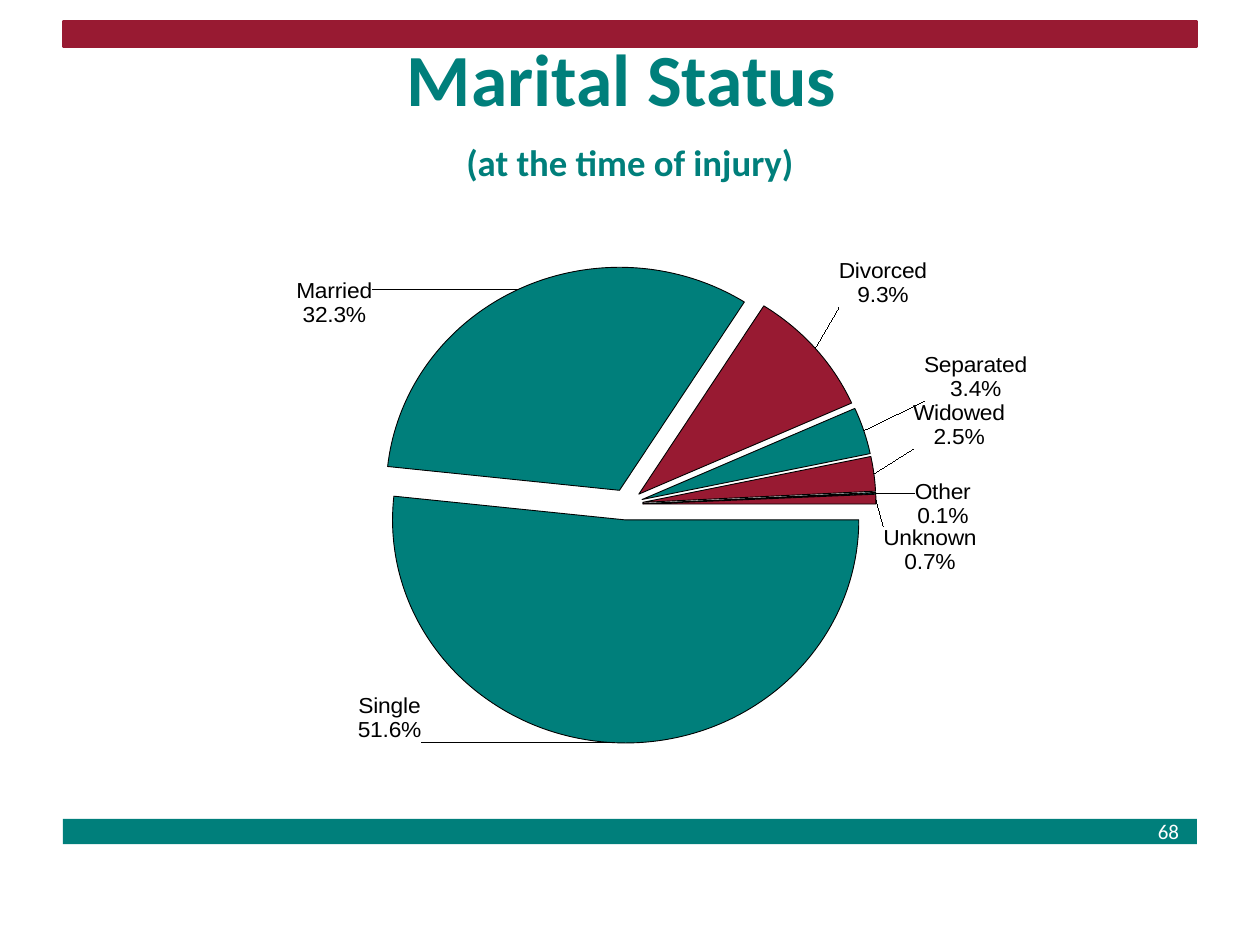
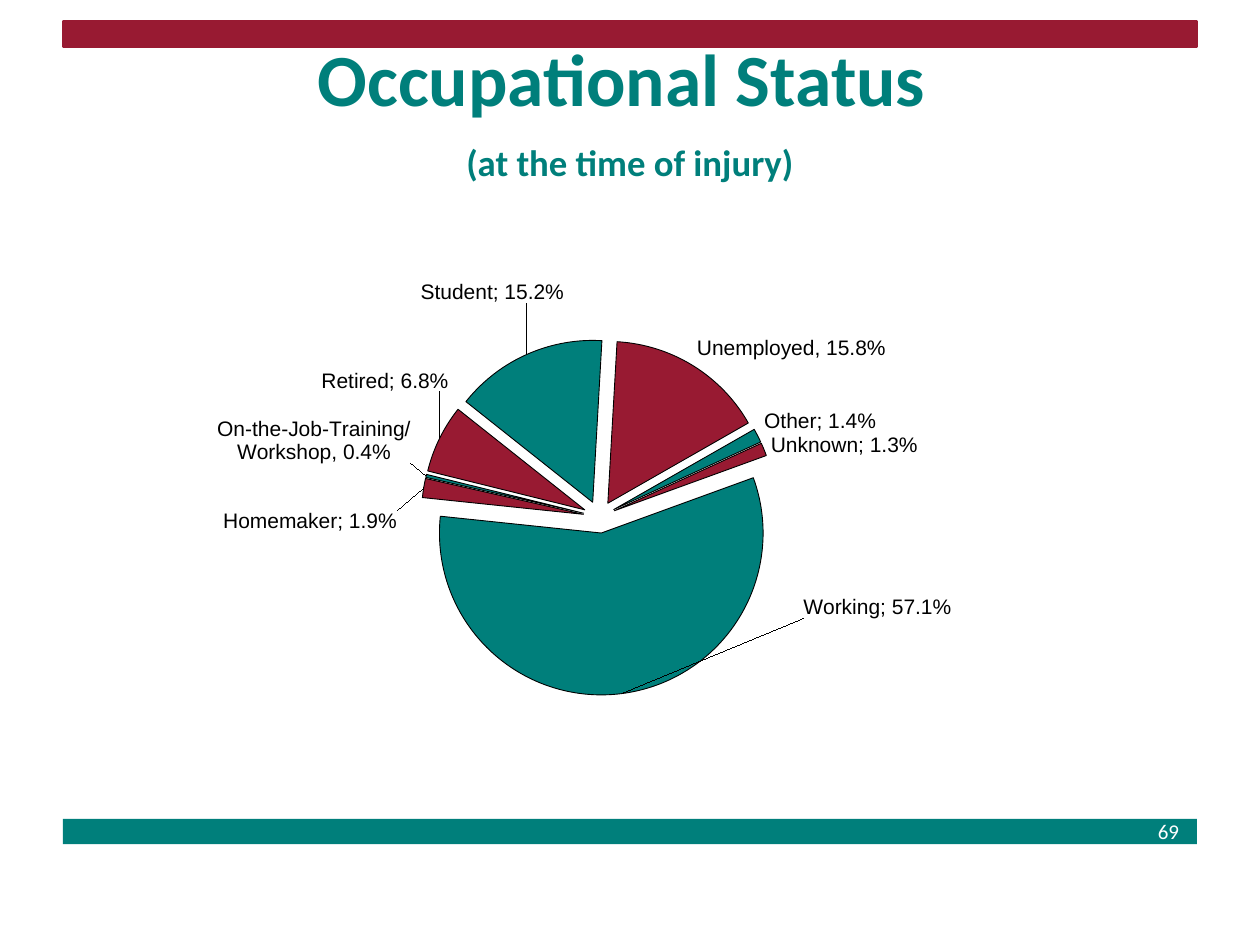
"""Build two slides of exploded pie charts on status at the time of injury."""
from dataclasses import dataclass

import pptx
import pptx.chart.data
import pptx.dml.color
import pptx.enum.chart
import pptx.enum.shapes
import pptx.enum.text
import pptx.oxml
import pptx.oxml.ns
import pptx.util

Pt = pptx.util.Pt
RGB = pptx.dml.color.RGBColor
TEAL = RGB(0x00, 0x7F, 0x7B)
RED = RGB(0x98, 0x1A, 0x32)
BLACK = RGB(0, 0, 0)
WHITE = RGB(255, 255, 255)
COLS, ROWS = 20, 30
WIDTH, HEIGHT = pptx.util.Inches(10), pptx.util.Inches(7.5)
PERCENT = "0.0%"


@dataclass(frozen=True)
class Box:
    """A place on the slide in grid columns and rows."""
    col: float
    row: float
    wide: float
    high: float

    def place(self) -> tuple[int, int, int, int]:
        """Return left, top, width and height in slide units."""
        x, y = WIDTH / COLS, HEIGHT / ROWS
        return (round(self.col * x), round(self.row * y),
                round(self.wide * x), round(self.high * y))


@dataclass(frozen=True)
class Band:
    """A coloured bar across the slide."""
    box: Box
    fill: RGB
    edge: bool


@dataclass(frozen=True)
class Slice:
    """A pie slice; shift moves its label by percent of the chart's size."""
    name: str
    value: float
    fill: RGB
    shift: tuple[float, float] | None = None
    label: str = ""

    def custom(self) -> bool:
        """Tell whether the slice has a label of its own."""
        return bool(self.shift or self.label)


@dataclass(frozen=True)
class Pie:
    """A pie chart with its plot area in percent of the chart's size."""
    title: str
    number: int
    start: int
    burst: int
    size: float
    plot: tuple[float, float, float, float]
    slices: list[Slice]


BANDS = [Band(Box(1, 26, 18, 0.8), TEAL, False),
         Band(Box(1, 0.68, 18, 0.8), RED, True)]
TITLE = Box(1, 1.48, 18, 4.72)
CHART = Box(1, 7, 18, 18.32)
NUMBER = Box(18.18, 25.8, 0.84, 1.2)
SUBTITLE = "(at the time of injury)"

PIES = [
    Pie("Marital Status ", 68, 90, 7, 13, (27.7, 3.4, 44, 96.1), [
        Slice("Single", 51.7, TEAL, (-19.7, -9.9), "Single\n51.6%"),
        Slice("Married", 32.3, TEAL, (-12.6, 8), "Married\n32.3%"),
        Slice("Divorced", 9.3, RED, (1.6, -6.5), "Divorced\n9.3%"),
        Slice("Separated", 3.4, TEAL, (4.7, -4.9), "Separated\n3.4%"),
        Slice("Widowed", 2.5, RED, (2.8, -4.3), "Widowed\n2.5%"),
        Slice("Other", 0.1, TEAL, (2.8, 2.1), "Other\n0.1%"),
        Slice("Unknown", 0.7, RED, (0, 9.4), "Unknown\n0.7%")]),
    Pie("Occupational Status ", 69, 70, 10, 12, (31.6, 18.3, 31.4, 66.2), [
        Slice("Working", 0.571, TEAL, (16, -18.2)),
        Slice("Homemaker", 0.019, RED, (-1.7, 8)),
        Slice("On-Job-Training/\nWorkshop", 0.003, TEAL, (-0.7, -1.9),
              "On-the-Job-Training/\nWorkshop, 0.4%"),
        Slice("Retired", 0.068, RED, (1.4, -7.5)),
        Slice("Student", 0.152, TEAL, (3.6, -7.7)),
        Slice("Unemployment", 0.158, RED, None, "Unemployed, 15.8%"),
        Slice("Other", 0.014, TEAL),
        Slice("Unknown", 0.013, RED, (0, 1.8))]),
]


def node(tag: str, inner: str = "", **attrs: object):
    """Make a chart element."""
    text = "".join(f' {key}="{val}"' for key, val in attrs.items())
    space = pptx.oxml.ns.nsdecls("c")
    return pptx.oxml.parse_xml(f"<c:{tag} {space}{text}>{inner}</c:{tag}>")


def layout(head: str, **parts: float):
    """Make a manual layout from percentages."""
    inner = "".join(f'<c:{key} val="{val / 100:.3f}"/>'
                    for key, val in parts.items())
    return node("layout", f"<c:manualLayout>{head}{inner}</c:manualLayout>")


def style(font, size: float, color: RGB, face: str, bold: bool = False) -> None:
    """Set a font's look."""
    font.size, font.name, font.bold = Pt(size), face, bold
    font.color.rgb = color


def draw_band(shapes, band: Band):
    """Draw one bar and return it."""
    kind = pptx.enum.shapes.MSO_SHAPE.RECTANGLE
    bar = shapes.add_shape(kind, *band.box.place())
    bar.shadow.inherit = False
    bar.fill.solid()
    bar.fill.fore_color.rgb = band.fill
    if band.edge:
        bar.line.color.rgb = band.fill
        bar.line.width = Pt(1.5)
    else:
        bar.line.fill.background()
    return bar


def draw_title(slide, text: str) -> None:
    """Fill the title with a heading and the shared subtitle."""
    shape = slide.shapes.title
    shape.left, shape.top, shape.width, shape.height = TITLE.place()
    frame = shape.text_frame
    frame.vertical_anchor = pptx.enum.text.MSO_ANCHOR.MIDDLE
    para = frame.paragraphs[0]
    para.alignment = pptx.enum.text.PP_ALIGN.CENTER
    para.line_spacing = Pt(36)
    style(para.font, 42, TEAL, "Calibri", True)
    para.add_run().text = text
    para.add_line_break()
    run = para.add_run()
    run.text = SUBTITLE
    run.font.size = Pt(21)


def draw_number(slide, number: int) -> None:
    """Write the slide number on the lower bar."""
    frame = slide.shapes.add_textbox(*NUMBER.place()).text_frame
    frame.word_wrap = True
    para = frame.paragraphs[0]
    para.text = str(number)
    style(para.font, 12, WHITE, "Calibri")


def draw_label(point, part: Slice, size: float) -> None:
    """Give a slice its own label."""
    label = point.data_label
    if part.label:
        label.text_frame.text = part.label
        for para in label.text_frame.paragraphs:
            style(para.font, size, BLACK, "Arial")
    else:
        style(label.font, size, BLACK, "Arial")
    label.position = pptx.enum.chart.XL_LABEL_POSITION.OUTSIDE_END


def move_label(label, part: Slice) -> None:
    """Shift a label and show its category and value."""
    if part.shift:
        x, y = part.shift
        label.insert(1, layout("", x=x, y=y))
    if not part.label:
        label.insert(2, node("numFmt", formatCode=PERCENT, sourceLinked=0))
    label.xpath("c:showCatName")[0].set("val", "1")
    label.append(node("separator", "; "))


def paint(look, fill: RGB) -> None:
    """Fill and outline a slice or a series."""
    look.fill.solid()
    look.fill.fore_color.rgb = fill
    look.line.color.rgb = BLACK
    look.line.width = Pt(0.5)


def draw_pie(slide, pie: Pie) -> None:
    """Draw the pie chart with its labels."""
    data = pptx.chart.data.CategoryChartData(number_format=PERCENT)
    data.categories = [part.name for part in pie.slices]
    data.add_series("Series 1", [part.value for part in pie.slices])
    kind = pptx.enum.chart.XL_CHART_TYPE.PIE
    chart = slide.shapes.add_chart(kind, *CHART.place(), data).chart
    chart.has_legend = chart.has_title = False
    style(chart.font, pie.size, BLACK, "Arial")
    plot = chart.plots[0]
    plot.vary_by_categories = False
    series = plot.series[0]
    labels = series.data_labels
    style(labels.font, pie.size, BLACK, "Arial")
    labels.number_format, labels.number_format_is_linked = PERCENT, False
    labels.show_value = labels.show_category_name = True
    labels.position = pptx.enum.chart.XL_LABEL_POSITION.OUTSIDE_END
    paint(series.format, TEAL)
    for index, part in enumerate(pie.slices):
        point = series.points[index]
        paint(point.format, part.fill)
        if part.custom():
            draw_label(point, part, pie.size)
    tune(chart.element, pie)


def tune(root, pie: Pie) -> None:
    """Set the layout, turn, burst and label places of a pie."""
    area = root.xpath(".//c:plotArea")[0]
    for old in area.xpath("c:layout | c:pieChart/c:firstSliceAng"):
        old.getparent().remove(old)
    head = ('<c:layoutTarget val="inner"/><c:xMode val="edge"/>'
            '<c:yMode val="edge"/>')
    area.insert(0, layout(head, **dict(zip("xywh", pie.plot))))
    area.xpath("c:pieChart")[0].append(node("firstSliceAng", val=pie.start))
    area.xpath(".//c:ser/c:spPr")[0].addnext(node("explosion", val=pie.burst))
    for look in area.xpath(".//c:dPt/c:spPr"):
        look.addprevious(node("explosion", val=pie.burst))
    group = area.xpath(".//c:ser/c:dLbls")[0]
    group.xpath("c:showBubbleSize")[0].addnext(node("separator", "; "))
    own = [part for part in pie.slices if part.custom()]
    for label, part in zip(group.xpath("c:dLbl"), own):
        move_label(label, part)


def main() -> None:
    """Build and save the slides."""
    deck = pptx.Presentation()
    deck.slide_width, deck.slide_height = WIDTH, HEIGHT
    base = deck.slide_layouts[5]
    for pie in PIES:
        slide = deck.slides.add_slide(base)
        if pie is PIES[0]:
            for band in BANDS:
                base.shapes.element.append(draw_band(slide.shapes, band).element)
        draw_title(slide, pie.title)
        draw_number(slide, pie.number)
        draw_pie(slide, pie)
    deck.save("out.pptx")


if __name__ == "__main__":
    main()
